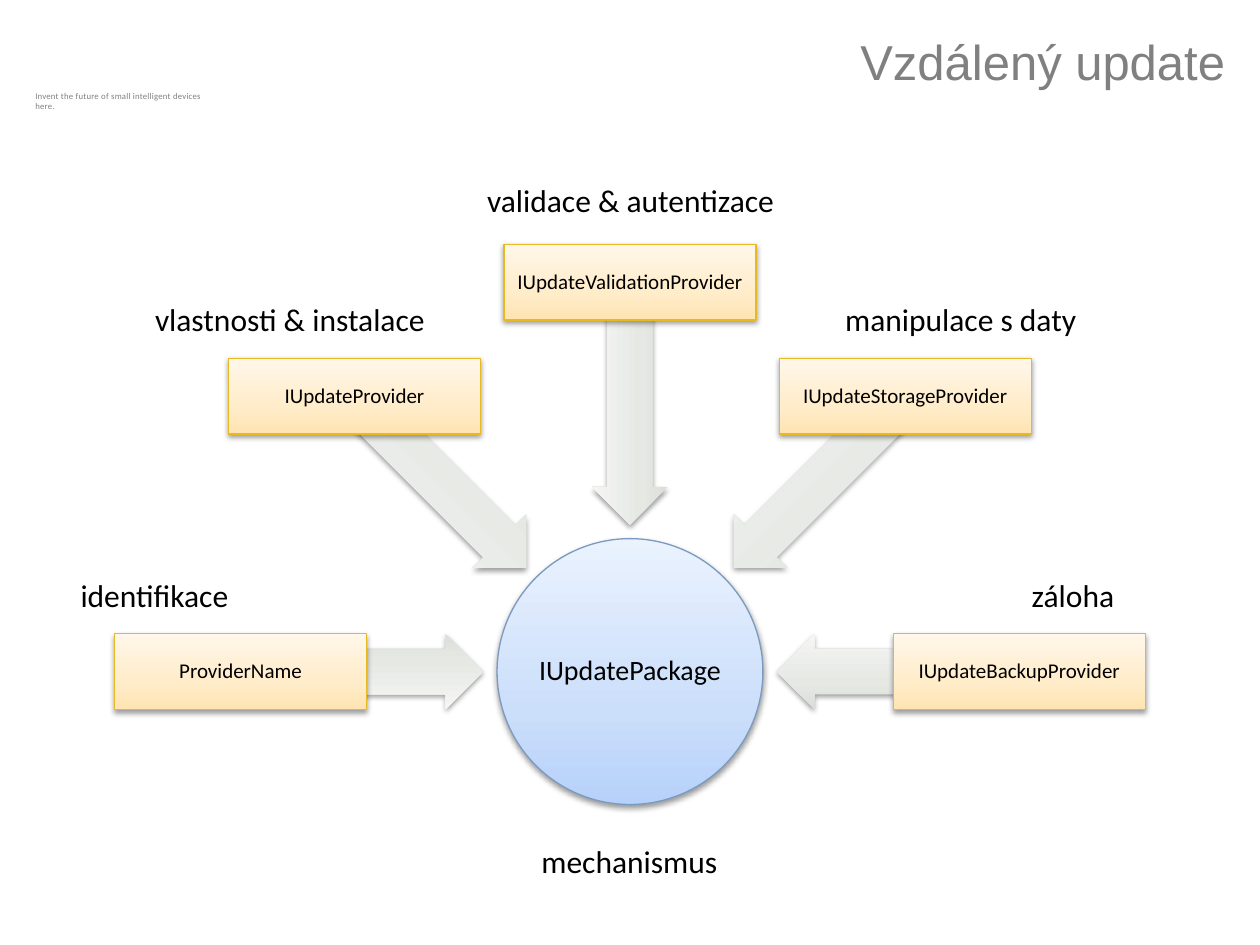
from copy import deepcopy
from math import cos, radians, sin

from pptx import Presentation
from pptx.dml.color import RGBColor
from pptx.enum.shapes import MSO_SHAPE as Shape
from pptx.enum.text import MSO_ANCHOR as Anchor, MSO_AUTO_SIZE as AutoSize, PP_ALIGN as Align
from pptx.oxml import parse_xml
from pptx.oxml.ns import nsdecls, qn
from pptx.util import Inches, Pt

COLORS = {
    "text": "000000",
    "muted": "808080",
    "hub_line": "7C9ABF",
    "box_line": "E7BA23",
}
GRADIENTS = {
    "hub": ["B6D1FA", "CBDEFA", "EAF2FE"],
    "arrow": ["DCDFD9", "E6E8E4", "F5F6F4"],
    "box": ["FFE4B2", "FFECC9", "FFF7EA"],
}
SHADOW = (
    f'<a:outerShdw {nsdecls("a")} blurRad="40000" dist="20000" dir="5400000" rotWithShape="0">'
    '<a:srgbClr val="000000"><a:alpha val="38000"/></a:srgbClr></a:outerShdw>'
)


def add_node(kind, center_x, center_y, width, height, gradient, line=None):
    shape = slide.shapes.add_shape(
        kind, Inches(center_x - width / 2), Inches(center_y - height / 2), Inches(width), Inches(height)
    )
    shape.fill.gradient()
    shape.fill.gradient_angle = 90
    stop_list = shape._element.spPr.find(".//" + qn("a:gsLst"))
    stop_list.append(deepcopy(stop_list[0]))
    for stop, position, color in zip(shape.fill.gradient_stops, (0, 0.35, 1), GRADIENTS[gradient]):
        stop.position = position
        stop.color.rgb = RGBColor.from_string(color)
    if line:
        shape.line.color.rgb = RGBColor.from_string(COLORS[line])
        shape.line.width = Pt(0.75)
    else:
        shape.line.fill.background()
    shape.shadow.inherit = False
    shape._element.spPr.find(qn("a:effectLst")).append(parse_xml(SHADOW))
    return shape


def write(shape, text, size, align, color="text", font="Calibri", margin=None):
    frame = shape.text_frame
    if margin is not None:
        frame.margin_left = frame.margin_right = Inches(margin)
        frame.margin_top = frame.margin_bottom = Inches(margin)
    paragraph = frame.paragraphs[0]
    paragraph.text = text
    paragraph.alignment = align
    paragraph.font.size = Pt(size)
    paragraph.font.name = font
    paragraph.font.color.rgb = RGBColor.from_string(COLORS[color])
    return frame


presentation = Presentation()
presentation.slide_width = Inches(10)
presentation.slide_height = Inches(7.5)
slide = presentation.slides.add_slide(presentation.slide_layouts[6])

slogan = slide.shapes.add_textbox(Inches(0.28), Inches(0.72), Inches(1.49), Inches(0.08))
frame = write(slogan, "Invent the future of small intelligent devices here.", 5, Align.LEFT, "muted", margin=0)
frame.word_wrap = True
frame.paragraphs[0].runs[0].font._element.set("spc", "10")

HUB_X, HUB_Y = 5, 5.33
BOX_RADIUS, ARROW_RADIUS = 3.09, 2.13

hub = add_node(Shape.OVAL, HUB_X, HUB_Y, 2.11, 2.11, "hub", "hub_line")
frame = write(hub, "IUpdatePackage", 16, Align.CENTER, margin=0)
frame.vertical_anchor = Anchor.MIDDLE
frame.paragraphs[0].line_spacing = 0.9

providers = [
    "ProviderName",
    "IUpdateProvider",
    "IUpdateValidationProvider",
    "IUpdateStorageProvider",
    "IUpdateBackupProvider",
]
for index, provider in enumerate(providers):
    angle = 180 + 45 * index
    dx, dy = cos(radians(angle)), sin(radians(angle))
    arrow = add_node(
        Shape.LEFT_ARROW, HUB_X + ARROW_RADIUS * dx, HUB_Y + ARROW_RADIUS * dy, 1.93, 0.6, "arrow"
    )
    arrow.adjustments[0] = 0.6
    arrow.adjustments[1] = 0.5
    arrow.rotation = angle % 360
    box = add_node(
        Shape.RECTANGLE, HUB_X + BOX_RADIUS * dx, HUB_Y + BOX_RADIUS * dy, 2, 0.6, "box", "box_line"
    )
    frame = write(box, provider, 12, Align.CENTER, margin=0.07)
    frame.vertical_anchor = Anchor.MIDDLE
    frame.paragraphs[0].line_spacing = 0.9

title = slide.shapes.add_textbox(Inches(3.19), Inches(0.25), Inches(6.63), Inches(0.47))
frame = write(title, "Vzdálený update", 28, Align.RIGHT, "muted", "Arial")
frame.word_wrap = True
frame.vertical_anchor = Anchor.MIDDLE

labels = [
    ("vlastnosti & instalace", 1.1, 2.33, 2.37, Align.RIGHT),
    ("validace & autentizace", 3.75, 1.39, 2.51, Align.CENTER),
    ("identifikace", 0.52, 4.52, 1.39, Align.RIGHT),
    ("manipulace s daty", 6.61, 2.33, 2.06, Align.LEFT),
    ("záloha", 8.09, 4.52, 0.86, Align.LEFT),
    ("mechanismus", 4.19, 6.63, 1.61, Align.CENTER),
]
for text, left, top, width, align in labels:
    label = slide.shapes.add_textbox(Inches(left), Inches(top), Inches(width), Inches(0.4))
    frame = write(label, text, 18, align)
    frame.word_wrap = False
    frame.auto_size = AutoSize.SHAPE_TO_FIT_TEXT

presentation.save("out.pptx")
